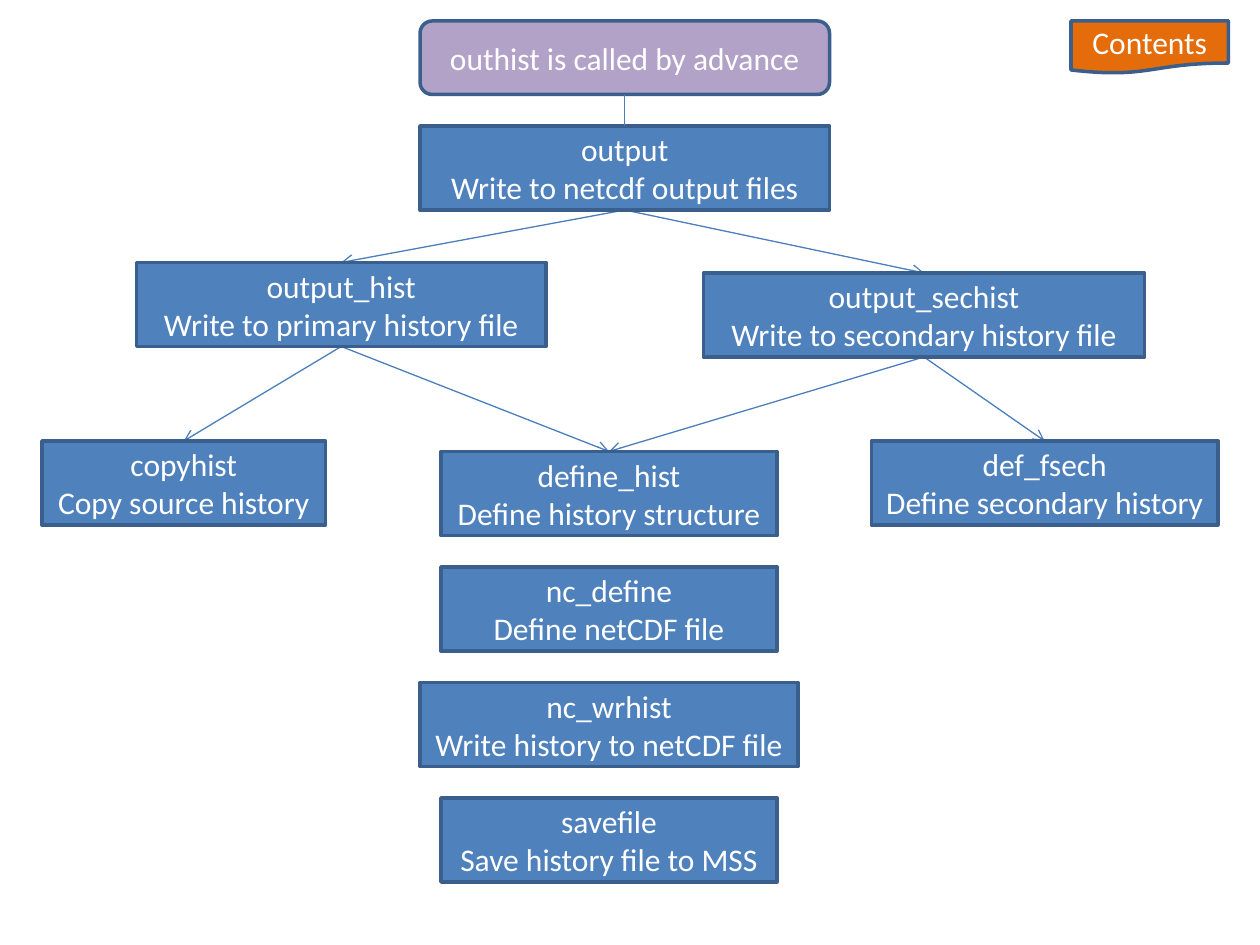
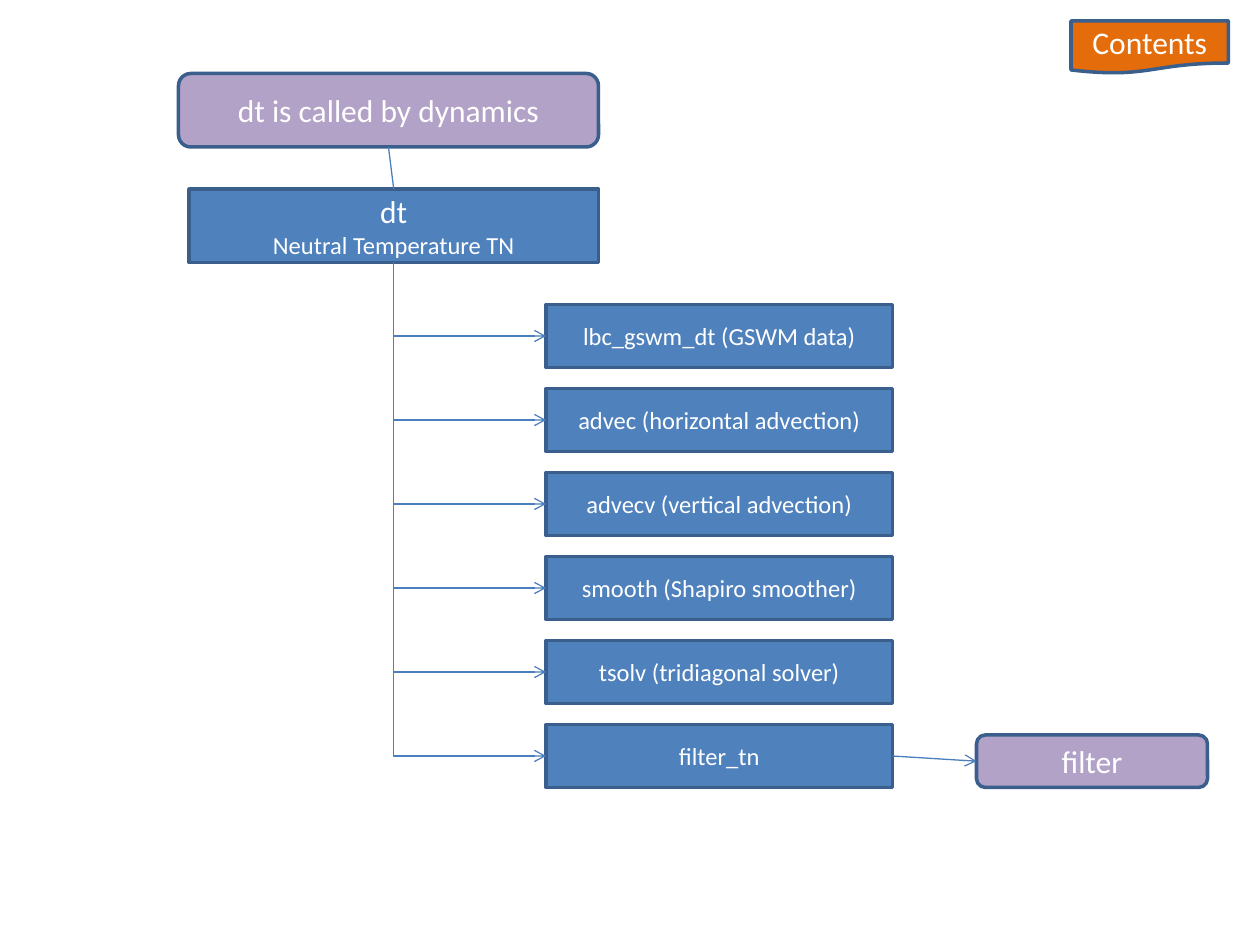
from dataclasses import dataclass

from lxml import etree
from pptx import Presentation
from pptx.dml.color import RGBColor
from pptx.enum.shapes import MSO_CONNECTOR as CXN, MSO_SHAPE as SHAPE
from pptx.enum.text import MSO_ANCHOR, PP_ALIGN
from pptx.oxml.ns import qn
from pptx.util import Pt

# Shared look: 96 px to the inch
PX = 9525
FONT = "Calibri"
BLUE, PURPLE, ORANGE = "4F81BD", "B3A2C7", "E46C0A"
BORDER, WIRE, WHITE = "3A5F8C", "4B7EBC", "FFFFFF"
TOP, LEFT, BOTTOM, RIGHT = range(4)


@dataclass(frozen=True)
class Box:
    lines: tuple[str, ...]
    x: int
    y: int
    w: int
    h: int = 64
    fill: str = BLUE
    kind: SHAPE = SHAPE.RECTANGLE
    size: int = 18
    sub_size: int = 18


@dataclass(frozen=True)
class Link:
    start: str
    end: str
    start_side: int = BOTTOM
    end_side: int = TOP
    arrow: bool = True
    behind: bool = False


CONTENTS = Box(("Contents",), 816, 16, 120, 40, ORANGE, SHAPE.FLOWCHART_DOCUMENT)


def rgb(color: str) -> RGBColor:
    return RGBColor.from_string(color)


def add_text(tf, text: str, *, size: int, color: str = WHITE, first: bool = False) -> None:
    p = tf.paragraphs[0] if first else tf.add_paragraph()
    p.alignment = PP_ALIGN.CENTER
    r = p.add_run()
    r.text = text
    r.font.name, r.font.size = FONT, Pt(size)
    r.font.color.rgb = rgb(color)


def draw_box(slide, box: Box):
    sp = slide.shapes.add_shape(box.kind, *(v * PX for v in (box.x, box.y, box.w, box.h)))
    sp.shadow.inherit = False
    sp.fill.solid()
    sp.fill.fore_color.rgb = rgb(box.fill)
    sp.line.color.rgb = rgb(BORDER)
    sp.line.width = Pt(2)
    tf = sp.text_frame
    tf.word_wrap = True
    tf.vertical_anchor = MSO_ANCHOR.MIDDLE
    for i, line in enumerate(box.lines):
        add_text(tf, line, size=box.sub_size if i else box.size, first=i == 0)
    return sp


def bend_down_then_right(cxn) -> None:
    """Turn an elbow connector into a single corner: drop first, then run."""
    x, y, run, drop = cxn.left, cxn.top, cxn.width, cxn.height
    cxn.left, cxn.top = x + (run - drop) // 2, y + (drop - run) // 2
    cxn.width, cxn.height = drop, run
    sp_pr = cxn._element.spPr
    xfrm = sp_pr.find(qn("a:xfrm"))
    xfrm.set("rot", "16200000")
    xfrm.set("flipH", "1")
    sp_pr.find(qn("a:prstGeom")).set("prst", "bentConnector2")


def draw_link(slide, shapes: dict, link: Link) -> None:
    bent = (link.start_side, link.end_side) == (BOTTOM, LEFT)
    cxn = slide.shapes.add_connector(CXN.ELBOW if bent else CXN.STRAIGHT, 0, 0, 0, 0)
    cxn.begin_connect(shapes[link.start], link.start_side)
    cxn.end_connect(shapes[link.end], link.end_side)
    if bent:
        bend_down_then_right(cxn)
    cxn.line.color.rgb = rgb(WIRE)
    cxn.line.width = Pt(0.75)
    if link.arrow:
        etree.SubElement(cxn.line._get_or_add_ln(), qn("a:tailEnd")).set("type", "arrow")
    etree.SubElement(cxn._element.spPr, qn("a:effectLst"))
    if link.behind:
        slide.shapes._spTree.insert(2, cxn._element)


def add_call_tree(prs, boxes: list[Box], links: list[Link]) -> None:
    """Draw one slide; links name each box by its first line."""
    slide = prs.slides.add_slide(prs.slide_layouts[6])
    shapes = {box.lines[0]: draw_box(slide, box) for box in boxes}
    for link in links:
        draw_link(slide, shapes, link)
    draw_box(slide, CONTENTS)


def output_slide(prs) -> None:
    caller = "outhist is called by advance"
    boxes = [
        Box((caller,), 320, 16, 312, 56, PURPLE, SHAPE.FLOWCHART_ALTERNATE_PROCESS),
        Box(("output", "Write to netcdf output files"), 320, 96, 312),
        Box(("output_hist", "Write to primary history file"), 104, 200, 312),
        Box(("output_sechist", "Write to secondary history file"), 536, 208, 336),
        Box(("copyhist", "Copy source history"), 32, 336, 216),
        Box(("def_fsech", "Define secondary history"), 664, 336, 264),
    ]
    # Centred column of history steps
    steps = [
        ("define_hist", "Define history structure", 256),
        ("nc_define", "Define netCDF file", 256),
        ("nc_wrhist", "Write history to netCDF file", 288),
        ("savefile", "Save history file to MSS", 256),
    ]
    boxes += [Box((name, job), 464 - w // 2, 344 + 88 * i, w)
              for i, (name, job, w) in enumerate(steps)]
    calls = {
        "output": ("output_hist", "output_sechist"),
        "output_hist": ("copyhist", "define_hist"),
        "output_sechist": ("define_hist", "def_fsech"),
    }
    links = [Link(start, end, behind=True) for start, ends in calls.items() for end in ends]
    add_call_tree(prs, boxes, links + [Link(caller, "output", arrow=False)])


def dt_slide(prs) -> None:
    caller = "dt is called by dynamics"
    steps = [
        "lbc_gswm_dt (GSWM data)",
        "advec (horizontal advection)",
        "advecv (vertical advection)",
        "smooth (Shapiro smoother)",
        "tsolv (tridiagonal solver)",
        "filter_tn",
    ]
    boxes = [
        Box((caller,), 136, 56, 320, 56, PURPLE, SHAPE.ROUNDED_RECTANGLE),
        Box(("dt", "Neutral Temperature TN"), 144, 144, 312, 56, sub_size=14),
        *(Box((step,), 416, 232 + 64 * i, 264, 48, size=14) for i, step in enumerate(steps)),
        Box(("filter",), 744, 560, 176, 40, PURPLE, SHAPE.FLOWCHART_ALTERNATE_PROCESS),
    ]
    links = [
        Link(caller, "dt", arrow=False),
        *(Link("dt", step, BOTTOM, LEFT) for step in steps),
        Link("filter_tn", "filter", RIGHT, LEFT),
    ]
    add_call_tree(prs, boxes, links)


def main() -> None:
    prs = Presentation()
    prs.slide_width, prs.slide_height = 960 * PX, 720 * PX
    output_slide(prs)
    dt_slide(prs)
    prs.save("out.pptx")


if __name__ == "__main__":
    main()
